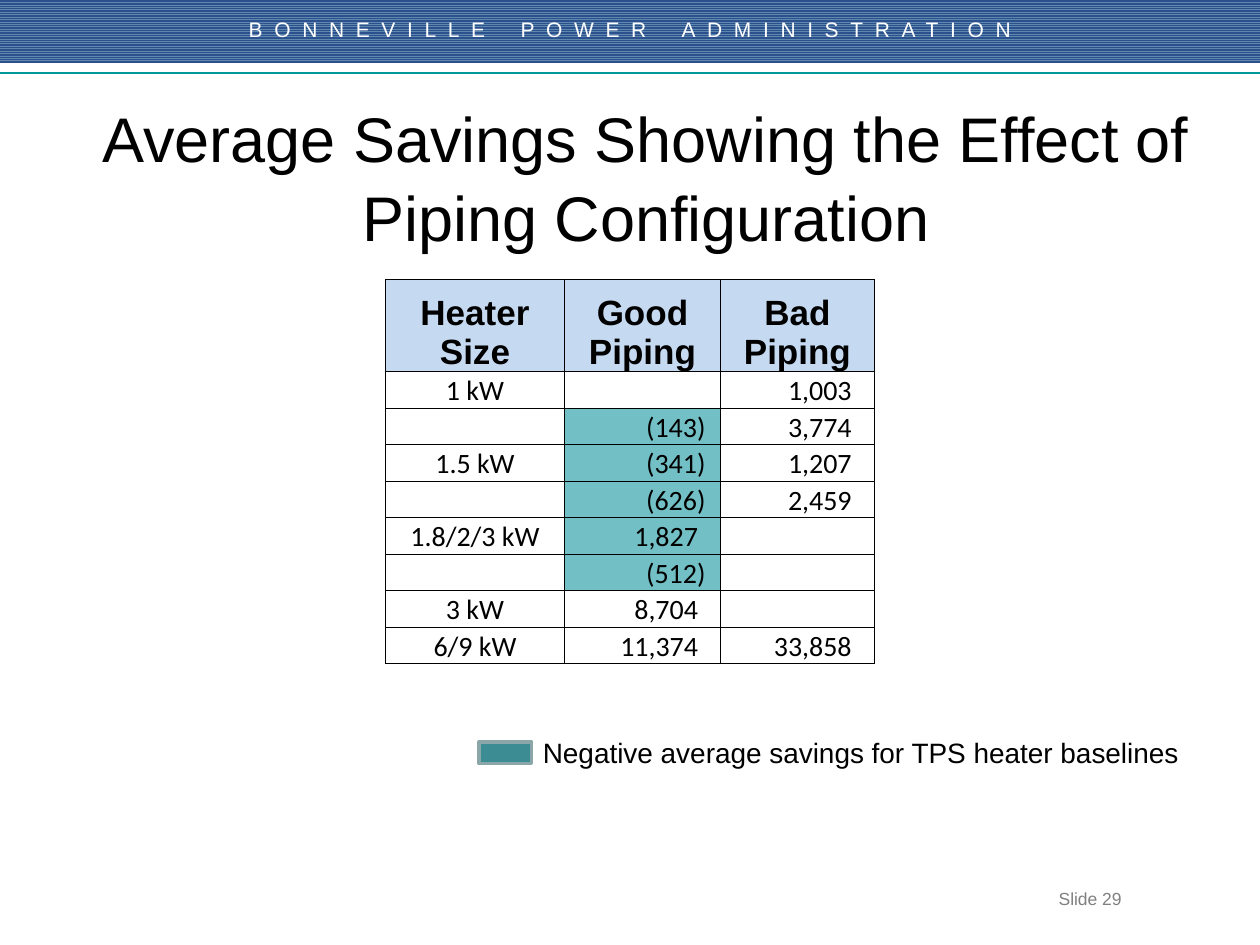
from lxml import etree
from pptx import Presentation
from pptx.dml.color import RGBColor
from pptx.enum.dml import MSO_PATTERN
from pptx.enum.shapes import MSO_CONNECTOR, MSO_SHAPE
from pptx.enum.text import MSO_ANCHOR, PP_ALIGN
from pptx.oxml.ns import qn
from pptx.util import Inches, Pt

LEFT, CENTER, RIGHT = PP_ALIGN.LEFT, PP_ALIGN.CENTER, PP_ALIGN.RIGHT
TOP, MIDDLE, BOTTOM = MSO_ANCHOR.TOP, MSO_ANCHOR.MIDDLE, MSO_ANCHOR.BOTTOM
STRIPES = MSO_PATTERN.LIGHT_HORIZONTAL
RECTANGLE = MSO_SHAPE.RECTANGLE
STRAIGHT = MSO_CONNECTOR.STRAIGHT

BLACK = RGBColor(0x00, 0x00, 0x00)
WHITE = RGBColor(0xFF, 0xFF, 0xFF)
GRAY = RGBColor(0x80, 0x80, 0x80)
STRIPE_LIGHT = RGBColor(0x5F, 0x88, 0xAD)
STRIPE_DARK = RGBColor(0x2B, 0x50, 0x8D)
RULE_TEAL = RGBColor(0x00, 0x99, 0x99)
HEADER_BLUE = RGBColor(0xC5, 0xD9, 0xF1)
CELL_TEAL = RGBColor(0x72, 0xBF, 0xC5)
KEY_TEAL = RGBColor(0x3C, 0x8C, 0x93)
KEY_EDGE = RGBColor(0x8A, 0xA6, 0xA8)

WIDTH, HEIGHT = Inches(10), Inches(7.5)
COLUMN_WIDTHS = (1.42, 1.24, 1.22)
HEADER_HEIGHT, ROW_HEIGHT = 0.73, 0.29
HEADINGS = ("Heater Size", "Good Piping", "Bad Piping")
SAVINGS = (
    ("1 kW", "", "1,003"),
    ("", "(143)", "3,774"),
    ("1.5 kW", "(341)", "1,207"),
    ("", "(626)", "2,459"),
    ("1.8/2/3 kW", "1,827", ""),
    ("", "(512)", ""),
    ("3 kW", "8,704", ""),
    ("6/9 kW", "11,374", "33,858"),
)
SHADED_ROWS = range(2, 7)


def add_span(para, text, size, color=BLACK, font="Arial", bold=False):
    span = para.add_run()
    span.text = text
    span.font.size = Pt(size)
    span.font.name = font
    span.font.bold = bold
    span.font.color.rgb = color
    return span


def add_box(page, left, top, width, height, align, anchor=TOP):
    box = page.shapes.add_textbox(
        Inches(left), Inches(top), Inches(width), Inches(height))
    box.text_frame.word_wrap = True
    box.text_frame.vertical_anchor = anchor
    para = box.text_frame.paragraphs[0]
    para.alignment = align
    return para


def add_rectangle(page, left, top, width, height):
    shape = page.shapes.add_shape(RECTANGLE, left, top, width, height)
    shape.shadow.inherit = False
    return shape


def add_banner(page):
    band = add_rectangle(page, 0, 0, WIDTH, HEIGHT // 15)
    band.fill.patterned()
    band.fill.pattern = STRIPES
    band.fill.fore_color.rgb = STRIPE_LIGHT
    band.fill.back_color.rgb = STRIPE_DARK
    band.line.fill.background()

    para = add_box(page, 0.25, 0.08, 9.5, 0.3, CENTER)
    for text, spacing in (("BONNEVILLE", 667), (" ", 1000), ("POWER", 667),
                          (" ", 1000), ("ADMINISTRATION", 667)):
        span = add_span(para, text, 12, WHITE)
        span.font._element.set("spc", str(spacing))

    rule = page.shapes.add_connector(
        STRAIGHT, 0, Inches(0.58), WIDTH, Inches(0.58))
    rule.line.color.rgb = RULE_TEAL
    rule.line.width = Pt(0.75)
    etree.SubElement(rule._element.spPr, qn("a:effectLst"))


def add_borders(cell):
    properties = cell._tc.get_or_add_tcPr()
    for side in ("a:lnL", "a:lnR", "a:lnT", "a:lnB"):
        edge = etree.SubElement(properties, qn(side), w=str(Pt(0.5)))
        fill = etree.SubElement(edge, qn("a:solidFill"))
        etree.SubElement(fill, qn("a:srgbClr"), val=str(BLACK))


def fill_cell(cell, text, row, column):
    add_borders(cell)
    cell.margin_left = cell.margin_top = cell.margin_bottom = 0
    cell.margin_right = 0
    cell.vertical_anchor = BOTTOM
    para = cell.text_frame.paragraphs[0]
    para.alignment = CENTER
    if row and column:
        para.alignment = RIGHT
        cell.margin_right = Inches(0.12 if text.startswith("(") else 0.18)

    if not text:
        etree.SubElement(para._p, qn("a:endParaRPr"), sz="1600")
    elif row:
        add_span(para, text, 16, font="Calibri")
    else:
        add_span(para, text, 20, bold=True)

    if row == 0 or (column == 1 and row in SHADED_ROWS):
        cell.fill.solid()
        cell.fill.fore_color.rgb = CELL_TEAL if row else HEADER_BLUE
    else:
        cell.fill.background()


def add_savings_table(page):
    rows = (HEADINGS,) + SAVINGS
    table = page.shapes.add_table(
        len(rows), len(HEADINGS), Inches(3.06), Inches(2.22),
        Inches(sum(COLUMN_WIDTHS)),
        Inches(HEADER_HEIGHT + ROW_HEIGHT * len(SAVINGS))).table
    table.first_row = table.horz_banding = False
    for column, width in zip(table.columns, COLUMN_WIDTHS):
        column.width = Inches(width)
    for row, texts in enumerate(rows):
        table.rows[row].height = Inches(ROW_HEIGHT if row else HEADER_HEIGHT)
        for column, text in enumerate(texts):
            fill_cell(table.cell(row, column), text, row, column)


def add_key(page):
    swatch = add_rectangle(
        page, Inches(3.8), Inches(5.89), Inches(0.42), Inches(0.17))
    swatch.fill.solid()
    swatch.fill.fore_color.rgb = KEY_TEAL
    swatch.line.color.rgb = KEY_EDGE
    swatch.line.width = Pt(2)
    para = add_box(page, 4.21, 5.58, 5.42, 0.78, LEFT, MIDDLE)
    add_span(para, "Negative average savings for TPS heater baselines", 16)


def main():
    deck = Presentation()
    deck.slide_width, deck.slide_height = WIDTH, HEIGHT
    page = deck.slides.add_slide(deck.slide_layouts[6])
    add_banner(page)
    number = add_box(page, 7.92, 7, 1.08, 0.27, RIGHT)
    add_span(number, "Slide 29", 10, GRAY)
    title = add_box(page, 0.25, 1, 9.75, 0.78, CENTER, MIDDLE)
    title.line_spacing = 1.05
    add_span(title, "Average Savings Showing the Effect of "
             "Piping Configuration", 36)
    add_savings_table(page)
    add_key(page)
    deck.save("out.pptx")


if __name__ == "__main__":
    main()
